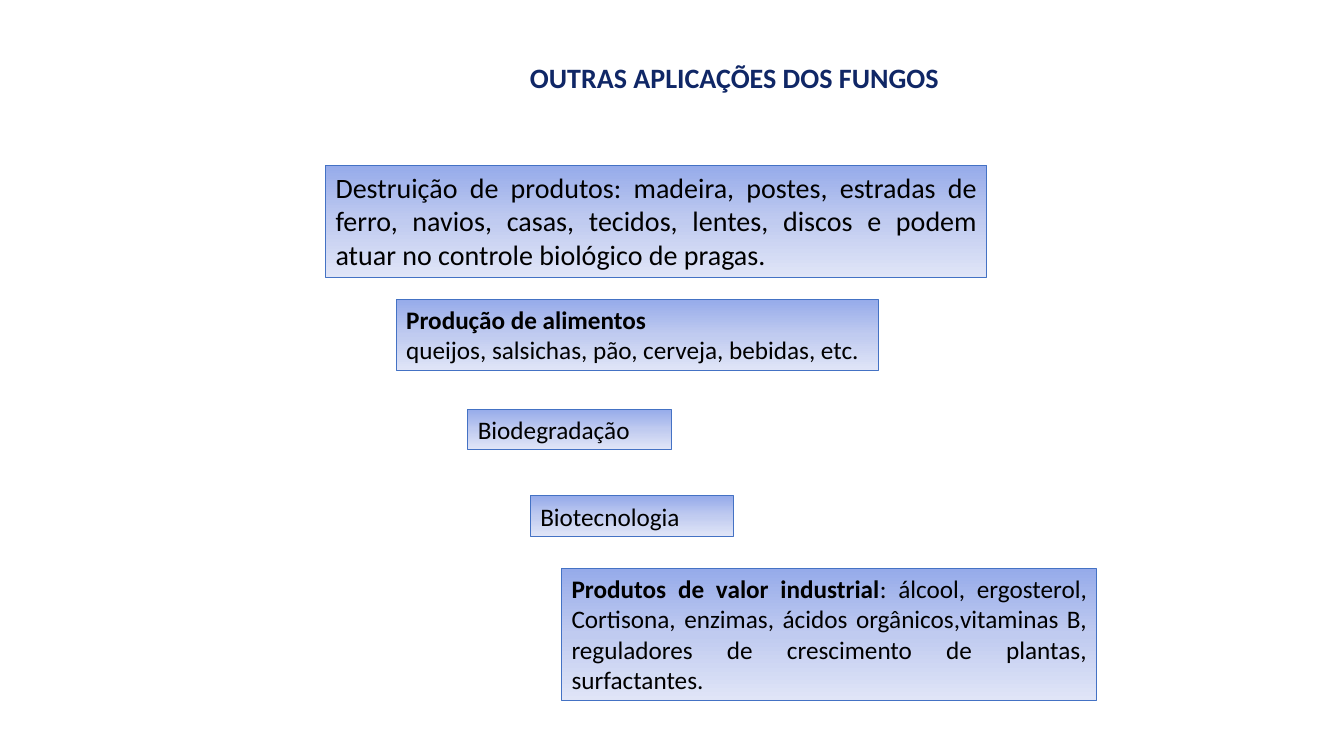
from copy import deepcopy

from pptx import Presentation
from pptx.dml.color import RGBColor
from pptx.enum.shapes import MSO_SHAPE
from pptx.enum.text import MSO_ANCHOR, MSO_AUTO_SIZE, PP_ALIGN
from pptx.oxml.ns import qn
from pptx.util import Inches, Pt

RECT = MSO_SHAPE.RECTANGLE
TOP = MSO_ANCHOR.TOP
GROW = MSO_AUTO_SIZE.SHAPE_TO_FIT_TEXT
LEFT, CENTER, JUSTIFY = PP_ALIGN.LEFT, PP_ALIGN.CENTER, PP_ALIGN.JUSTIFY
GRADIENT = ["96ABEA", "C0CBF0", "E0E5F7"]
HANGING = 0.38

APPLICATIONS = [
    ((3.23, 1.64, 6.56, 1.11), 20, JUSTIFY, 0, [[
        ("Destruição de produtos: madeira, postes, estradas de ferro, navios, "
         "casas, tecidos, lentes, discos e podem atuar no controle biológico "
         "de pragas.", False)]]),
    ((3.93, 2.97, 4.78, 0.71), 18, LEFT, HANGING, [
        [("Produção de alimentos", True)],
        [("queijos, salsichas, pão, cerveja, bebidas, etc.", False)]]),
    ((4.64, 4.06, 2.02, 0.4), 18, LEFT, HANGING, [[("Biodegradação", False)]]),
    ((5.26, 4.92, 2.02, 0.4), 18, LEFT, 0, [[("Biotecnologia", False)]]),
    ((5.57, 5.64, 5.31, 1.31), 18, JUSTIFY, 0, [[
        ("Produtos de valor industrial", True),
        (": álcool, ergosterol, Cortisona, enzimas, ácidos orgânicos,"
         "vitaminas B, reguladores de crescimento de plantas, surfactantes.",
         False)]]),
]


def rgb(color):
    return RGBColor.from_string(color)


def fill_text(tf, paragraphs, size, align, color, hanging=0, wrap=True):
    for name, value in {"word_wrap": wrap, "auto_size": GROW,
                        "vertical_anchor": TOP}.items():
        setattr(tf, name, value)
    for i, runs in enumerate(paragraphs):
        p = tf.add_paragraph() if i else tf.paragraphs[0]
        p.alignment = align
        if hanging:
            pPr = p._p.get_or_add_pPr()
            pPr.set("marL", str(Inches(hanging)))
            pPr.set("indent", str(-Inches(hanging)))
        for text, bold in runs:
            r = p.add_run()
            r.text = text
            for name, value in {"name": "Calibri", "size": Pt(size),
                                "bold": bold}.items():
                setattr(r.font, name, value)
            r.font.color.rgb = rgb(color)


def fill_gradient(sp):
    sp.fill.gradient()
    sp.fill.gradient_angle = 270
    stops = sp._element.spPr.find(qn("a:gradFill")).find(qn("a:gsLst"))
    stops.insert(1, deepcopy(stops[0]))
    for i, (stop, color) in enumerate(zip(sp.fill.gradient_stops, GRADIENT)):
        stop.position = i / (len(GRADIENT) - 1)
        stop.color.rgb = rgb(color)


def add_title(s, box):
    sp = s.shapes.add_textbox(*map(Inches, box))
    fill_text(sp.text_frame, [[("OUTRAS APLICAÇÕES DOS FUNGOS", True)]],
              20, CENTER, "102766", wrap=False)


def add_application(s, box, size, align, hanging, paragraphs):
    sp = s.shapes.add_shape(RECT, *map(Inches, box))
    sp.shadow.inherit = False
    fill_gradient(sp)
    sp.line.color.rgb = rgb("4472C4")
    sp.line.width = Pt(0.75)
    fill_text(sp.text_frame, paragraphs, size, align, "000000", hanging)


def main():
    prs = Presentation()
    prs.slide_width, prs.slide_height = Inches(13.33), Inches(7.5)
    s = prs.slides.add_slide(prs.slide_layouts[6])
    add_title(s, (5.14, 0.55, 4.29, 0.44))
    for application in APPLICATIONS:
        add_application(s, *application)
    prs.save("out.pptx")


if __name__ == "__main__":
    main()
